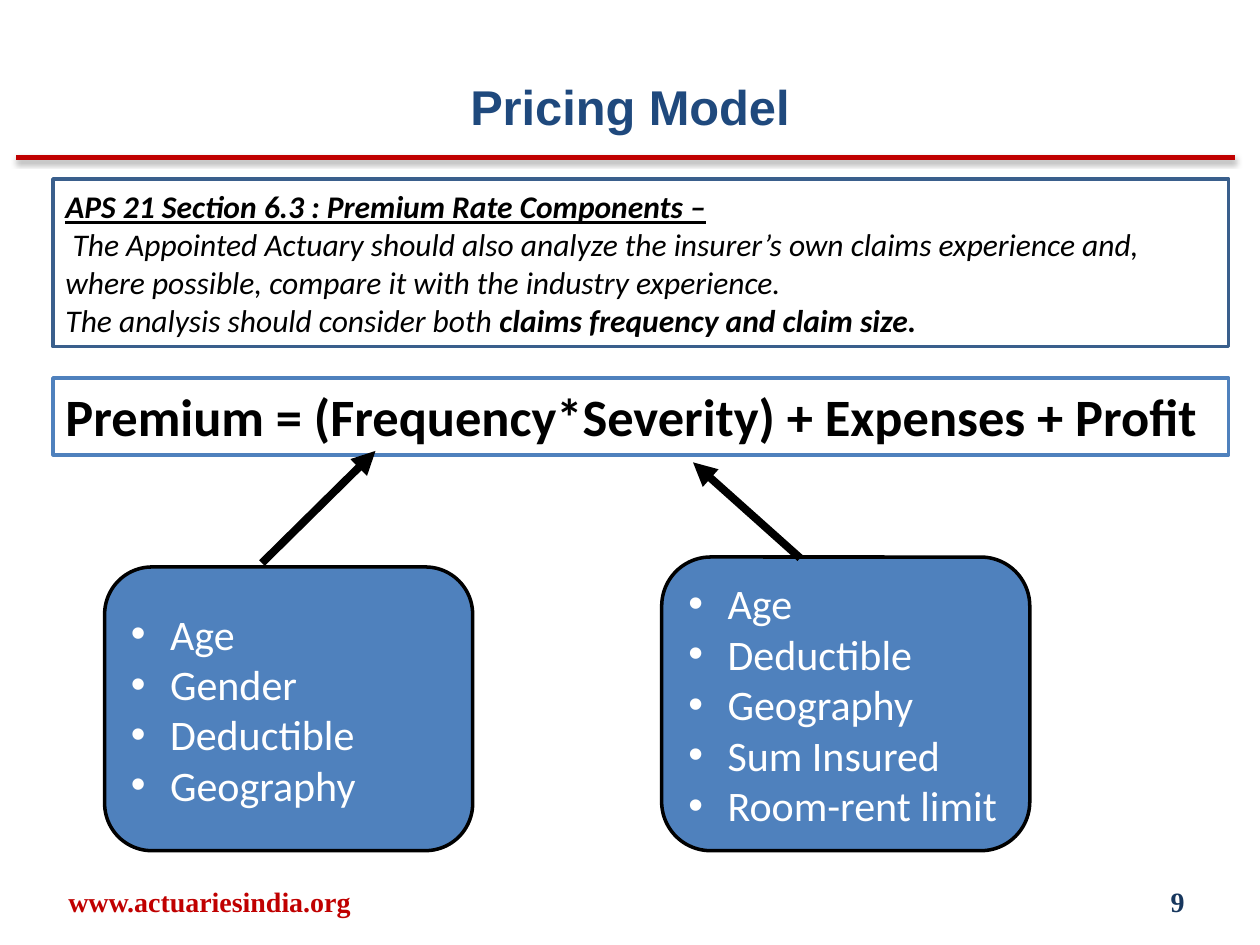
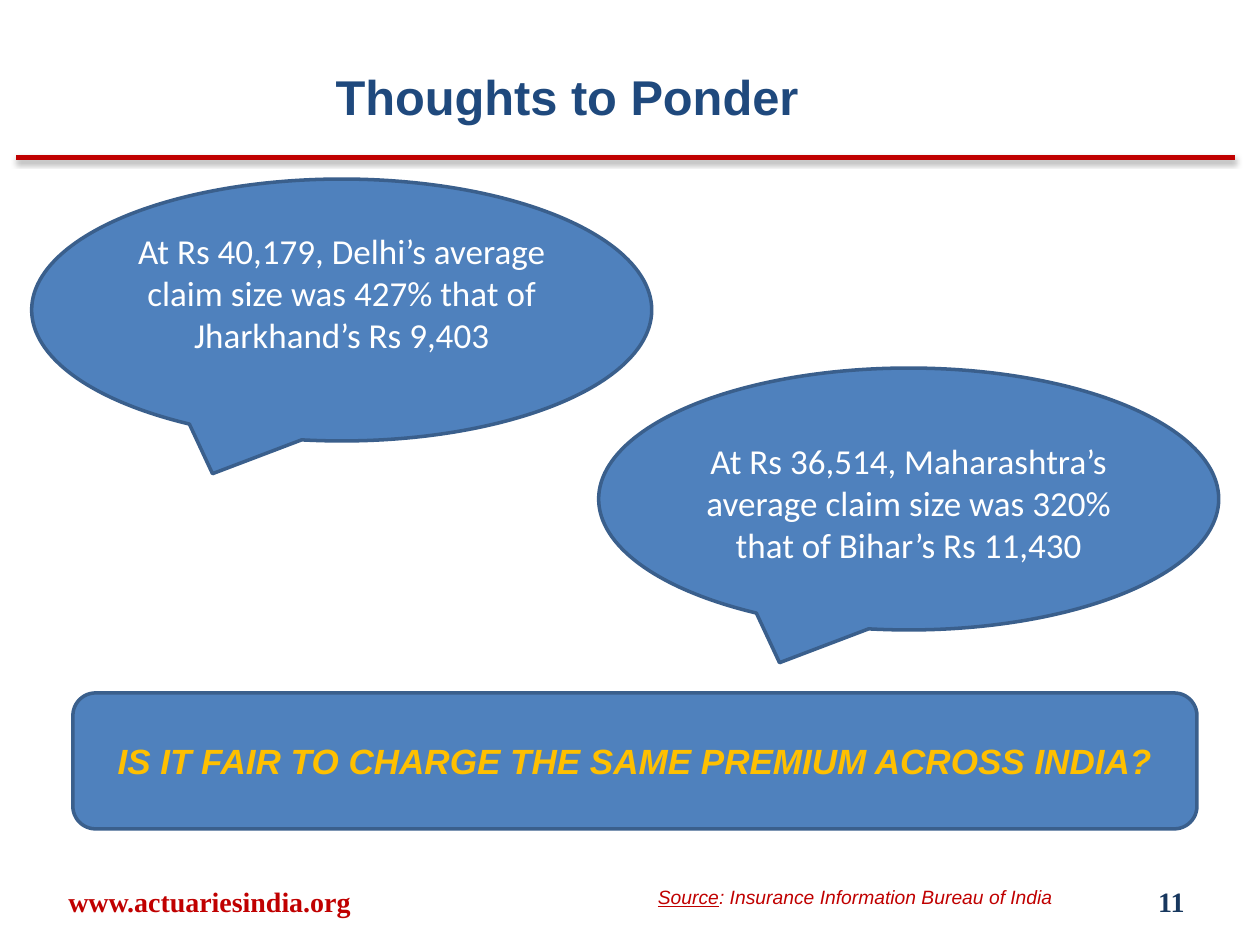
"""Build two slides on health premium pricing."""
from dataclasses import dataclass

from lxml import etree
from pptx import Presentation
from pptx import util as u
from pptx.dml import color
from pptx.enum import shapes, text
from pptx.oxml import ns


@dataclass(frozen=True)
class Theme:
    red: str = "C00000"
    navy: str = "1F497D"
    deep: str = "17375E"
    blue: str = "4F81BD"
    edge: str = "3A5F8C"
    gold: str = "FFC000"
    white: str = "FFFFFF"
    black: str = "000000"
    body: str = "Calibri"
    head: str = "Arial"
    foot: str = "Times New Roman"
    title: float = 27.9
    large: float = 30
    list: float = 24
    mid: float = 20
    text: float = 18
    small: float = 16
    tiny: float = 11


T = Theme()
KIND = shapes.MSO_SHAPE
ALIGN = text.PP_ALIGN

SITE = "www.actuariesindia.org"
MODEL = {"title": "Pricing Model", "spot": (1.27, 1.39), "page": "9"}
PONDER = {"title": "Thoughts to Ponder", "spot": (0, 1.18), "page": "11"}

RULE = [
    [("APS 21 Section 6.3 : Premium Rate Components –", "biu")],
    [(" The Appointed Actuary should also analyze the insurer’s own claims "
      "experience and, where possible, compare it with the industry "
      "experience.", "i")],
    [("The analysis should consider both ", "i"),
     ("claims frequency and claim size.", "bi")],
]
SUM = "Premium = (Frequency*Severity) + Expenses + Profit"
DRIVERS = [
    {"items": ["Age", "Gender", "Deductible", "Geography"],
     "at": (2.11, 11.43, 7.42, 5.72),
     "arrow": (5.28, 11.35, 7.57, 9.09)},
    {"items": ["Age", "Deductible", "Geography", "Sum Insured",
               "Room-rent limit"],
     "at": (13.34, 11.23, 7.42, 5.92),
     "arrow": (16.13, 11.25, 13.97, 9.32)},
]
CLAIMS = [
    {"say": "At Rs 40,179, Delhi’s average claim size was 427% that of "
            "Jharkhand’s Rs 9,403",
     "spot": (0.64, 3.61), "pad": (0.13, 0.82)},
    {"say": "At Rs 36,514, Maharashtra’s average claim size was 320% that of "
            "Bihar’s Rs 11,430",
     "spot": (12.07, 7.42), "pad": (0.28, 0.13)},
]
ASK = "IS IT FAIR TO CHARGE THE SAME PREMIUM ACROSS INDIA?"
SOURCE = [[("Source", "iu"), (": Insurance Information Bureau of India", "i")]]


def rgb(code):
    return color.RGBColor.from_string(code)


def cms(at):
    return [u.Cm(v) for v in at]


def add(parent, tag, **attrs):
    node = etree.SubElement(parent, ns.qn(tag))
    for key, val in attrs.items():
        node.set(key, str(val))
    return node


def write(shape, paras, size=T.text, font=T.body, ink=T.black, style="",
          align=ALIGN.LEFT, anchor=text.MSO_ANCHOR.MIDDLE, bullet=False,
          pad=(0.13, 0.13)):
    frame = shape.text_frame
    frame.word_wrap = True
    frame.vertical_anchor = anchor
    frame.margin_top, frame.margin_bottom = cms(pad)
    if isinstance(paras, str):
        paras = [paras]
    for n, runs in enumerate(paras):
        para = frame.paragraphs[0] if n == 0 else frame.add_paragraph()
        para.alignment = align
        if bullet:
            props = para._p.get_or_add_pPr()
            props.set("marL", str(u.Cm(0.79)))
            props.set("indent", str(u.Cm(-0.79)))
            add(props, "a:buFont", typeface=T.head)
            add(props, "a:buChar", char="•")
        for words, marks in [(runs, style)] if isinstance(runs, str) else runs:
            run = para.add_run()
            run.text = words
            face = run.font
            face.name, face.size = font, u.Pt(size)
            face.color.rgb = rgb(ink)
            face.bold, face.italic = "b" in marks, "i" in marks
            face.underline = "u" in marks


def label(slide, at, paras, **fmt):
    write(slide.shapes.add_textbox(*cms(at)), paras, **fmt)


def box(slide, kind, at, paras, fill=T.blue, edge=T.edge, **fmt):
    shape = slide.shapes.add_shape(kind, *cms(at))
    shape.shadow.inherit = False
    if fill:
        shape.fill.solid()
        shape.fill.fore_color.rgb = rgb(fill)
    else:
        shape.fill.background()
    shape.line.color.rgb = rgb(edge)
    shape.line.width = u.Pt(2)
    write(shape, paras, **fmt)


def line(slide, ends, ink, width, head=False, shade=False):
    link = slide.shapes.add_connector(shapes.MSO_CONNECTOR.STRAIGHT, *cms(ends))
    link.line.color.rgb = rgb(ink)
    link.line.width = u.Pt(width)
    if head:
        add(link.line._get_or_add_ln(), "a:tailEnd", type="triangle")
    glow = add(link._element.spPr, "a:effectLst")
    if shade:
        cast = add(glow, "a:outerShdw", blurRad=u.Pt(3.1), dist=u.Pt(1.6),
                   dir=5400000, rotWithShape=0)
        add(add(cast, "a:srgbClr", val=T.black), "a:alpha", val=38000)


def start(deck, info):
    slide = deck.slides.add_slide(deck.slide_layouts[6])
    line(slide, (0.33, 3.18, 24.89, 3.18), T.red, 3, shade=True)
    label(slide, (*info["spot"], 22.86, 1.5), info["title"], size=T.title,
          font=T.head, ink=T.navy, style="b", align=ALIGN.CENTER)
    foot = {"size": T.small, "font": T.foot, "style": "b"}
    label(slide, (0.2, 17.65, 8.05, 1.02), SITE, ink=T.red,
          align=ALIGN.CENTER, **foot)
    label(slide, (18.21, 17.65, 5.92, 1.02), info["page"], ink=T.deep,
          align=ALIGN.RIGHT, **foot)
    return slide


def model(deck):
    slide = start(deck, MODEL)
    box(slide, KIND.RECTANGLE, (1.07, 3.61, 23.7, 3.38), RULE, fill=None)
    box(slide, KIND.RECTANGLE, (1.07, 7.62, 23.7, 1.55), SUM, fill=T.white,
        edge=T.blue, size=T.large, style="b", anchor=text.MSO_ANCHOR.TOP)
    for part in DRIVERS:
        box(slide, KIND.ROUNDED_RECTANGLE, part["at"], part["items"],
            edge=T.black, size=T.list, ink=T.white, bullet=True)
        line(slide, part["arrow"], T.black, 4.5, head=True)


def ponder(deck):
    slide = start(deck, PONDER)
    for claim in CLAIMS:
        box(slide, KIND.OVAL_CALLOUT, (*claim["spot"], 12.5, 5.28),
            claim["say"], size=T.mid, ink=T.white, align=ALIGN.CENTER,
            pad=claim["pad"])
    label(slide, (12.8, 17.65, 8.89, 0.84), SOURCE, size=T.tiny, font=T.head,
          ink=T.red, align=ALIGN.CENTER)
    box(slide, KIND.ROUNDED_RECTANGLE, (1.47, 13.97, 22.66, 2.74), ASK,
        size=T.mid, font=T.head, ink=T.gold, style="bi", align=ALIGN.CENTER)


def main():
    deck = Presentation()
    deck.slide_width, deck.slide_height = cms((25.4, 19.05))
    model(deck)
    ponder(deck)
    deck.save("out.pptx")


if __name__ == "__main__":
    main()
